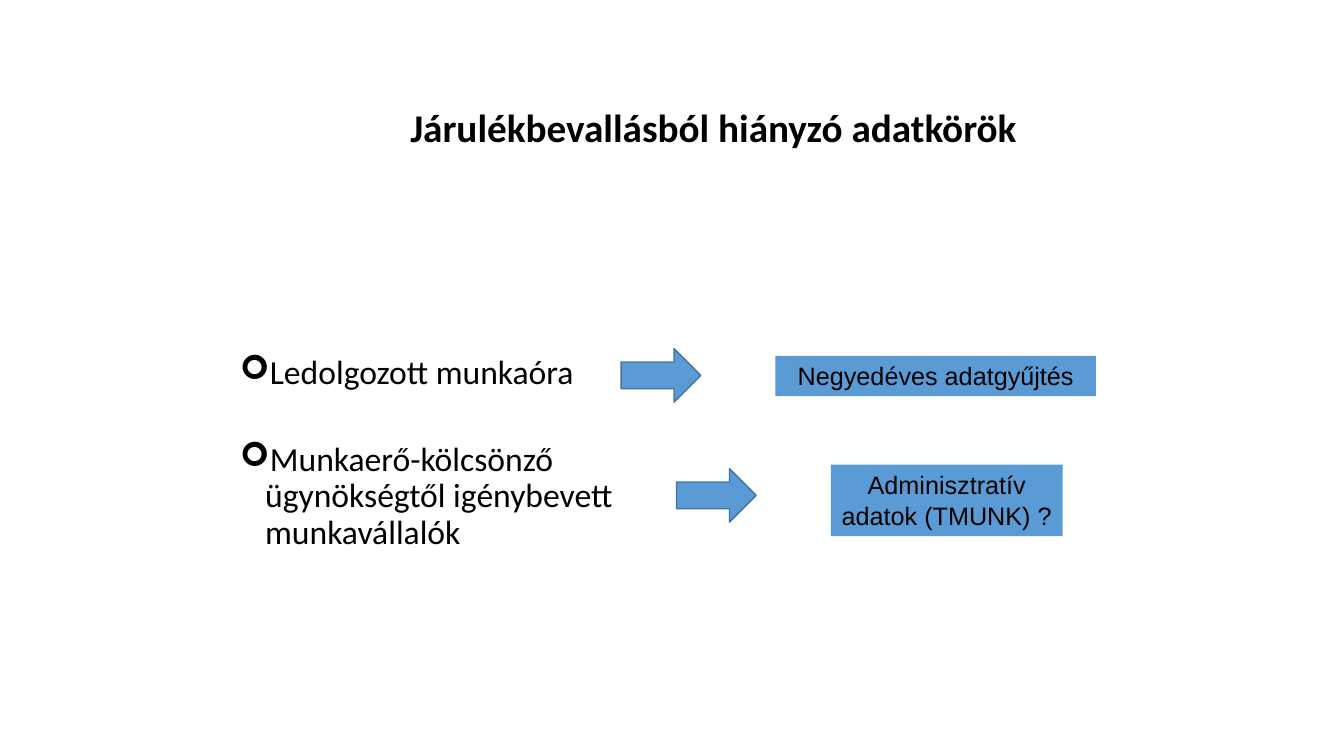
from pptx import Presentation
from pptx.dml.color import RGBColor
from pptx.enum.shapes import MSO_SHAPE
from pptx.enum.text import MSO_ANCHOR, MSO_AUTO_SIZE, PP_ALIGN
from pptx.oxml.ns import qn
from pptx.util import Inches, Pt
from lxml import etree

BLACK = RGBColor(0x00, 0x00, 0x00)
BLUE = RGBColor(0x5B, 0x9B, 0xD5)
DARK_BLUE = RGBColor(0x43, 0x73, 0x9E)
RECTANGLE, RIGHT_ARROW = MSO_SHAPE.RECTANGLE, MSO_SHAPE.RIGHT_ARROW
CENTER, TOP, MIDDLE = PP_ALIGN.CENTER, MSO_ANCHOR.TOP, MSO_ANCHOR.MIDDLE
NO_AUTOFIT = MSO_AUTO_SIZE.NONE

TITLE = "Járulékbevallásból hiányzó adatkörök"
# A vertical tab is a line break within the item.
MISSING_DATA = [
    "Ledolgozott munkaóra",
    "Munkaerő-kölcsönző\vügynökségtől igénybevett\vmunkavállalók",
]


def place(sp, left, top, width, height):
    sp.left, sp.top = Inches(left), Inches(top)
    sp.width, sp.height = Inches(width), Inches(height)


def format_runs(p, font, size, bold=False):
    for r in p.runs:
        r.font.name = font
        r.font.size = Pt(size)
        r.font.bold = bold
        r.font.color.rgb = BLACK


def add_bullet(p, char, margin, indent):
    """Give the paragraph a bullet with a hanging indent."""
    pPr = p._p.get_or_add_pPr()
    pPr.set("marL", str(Inches(margin)))
    pPr.set("indent", str(Inches(indent)))
    etree.SubElement(pPr, qn("a:buFont")).set("typeface", "Wingdings")
    etree.SubElement(pPr, qn("a:buChar")).set("char", char)


def fill_title(sp):
    place(sp, 2.54, 0.93, 9.07, 0.71)
    tf = sp.text_frame
    tf.text = TITLE
    tf.auto_size = NO_AUTOFIT
    tf.vertical_anchor = MIDDLE
    p = tf.paragraphs[0]
    p.alignment = CENTER
    p.line_spacing = 0.9
    format_runs(p, "Calibri", 28, bold=True)


def fill_list(sp):
    place(sp, 1.78, 2.05, 9.83, 4.7)
    tf = sp.text_frame
    tf.auto_size = NO_AUTOFIT
    tf.vertical_anchor = TOP
    tf.margin_top = Inches(1.48)
    for i, item in enumerate(MISSING_DATA):
        p = tf.add_paragraph() if i else tf.paragraphs[0]
        p.text = item
        p.level = 1
        p.line_spacing = 0.9
        p.space_before = Pt(36 if i else 0)
        add_bullet(p, "➢", 0.75, -0.25)
        format_runs(p, "Calibri", 24)


def add_blue_shape(slide, kind, left, top, width, height):
    sp = slide.shapes.add_shape(kind, Inches(left), Inches(top),
                                Inches(width), Inches(height))
    sp.shadow.inherit = False
    sp.fill.solid()
    sp.fill.fore_color.rgb = BLUE
    return sp


def add_arrow(slide, left, top):
    sp = add_blue_shape(slide, RIGHT_ARROW, left, top, 0.79, 0.53)
    sp.line.color.rgb = DARK_BLUE
    sp.line.width = Pt(1)


def add_source_box(slide, text, left, top, width, height):
    sp = add_blue_shape(slide, RECTANGLE, left, top, width, height)
    sp.line.fill.background()
    tf = sp.text_frame
    tf.word_wrap = True
    tf.vertical_anchor = TOP
    tf.text = text
    p = tf.paragraphs[0]
    p.alignment = CENTER
    format_runs(p, "Arial", 18)


def main():
    prs = Presentation()
    prs.slide_width, prs.slide_height = Inches(13.33), Inches(7.5)
    slide = prs.slides.add_slide(prs.slide_layouts[1])
    fill_title(slide.shapes.title)
    fill_list(slide.placeholders[1])
    add_source_box(slide, "Negyedéves adatgyűjtés", 7.69, 3.53, 3.18, 0.4)
    add_source_box(slide, "Adminisztratív adatok (TMUNK) ?",
                   8.24, 4.61, 2.3, 0.71)
    add_arrow(slide, 6.16, 3.46)
    add_arrow(slide, 6.71, 4.65)
    prs.save("out.pptx")


if __name__ == "__main__":
    main()
